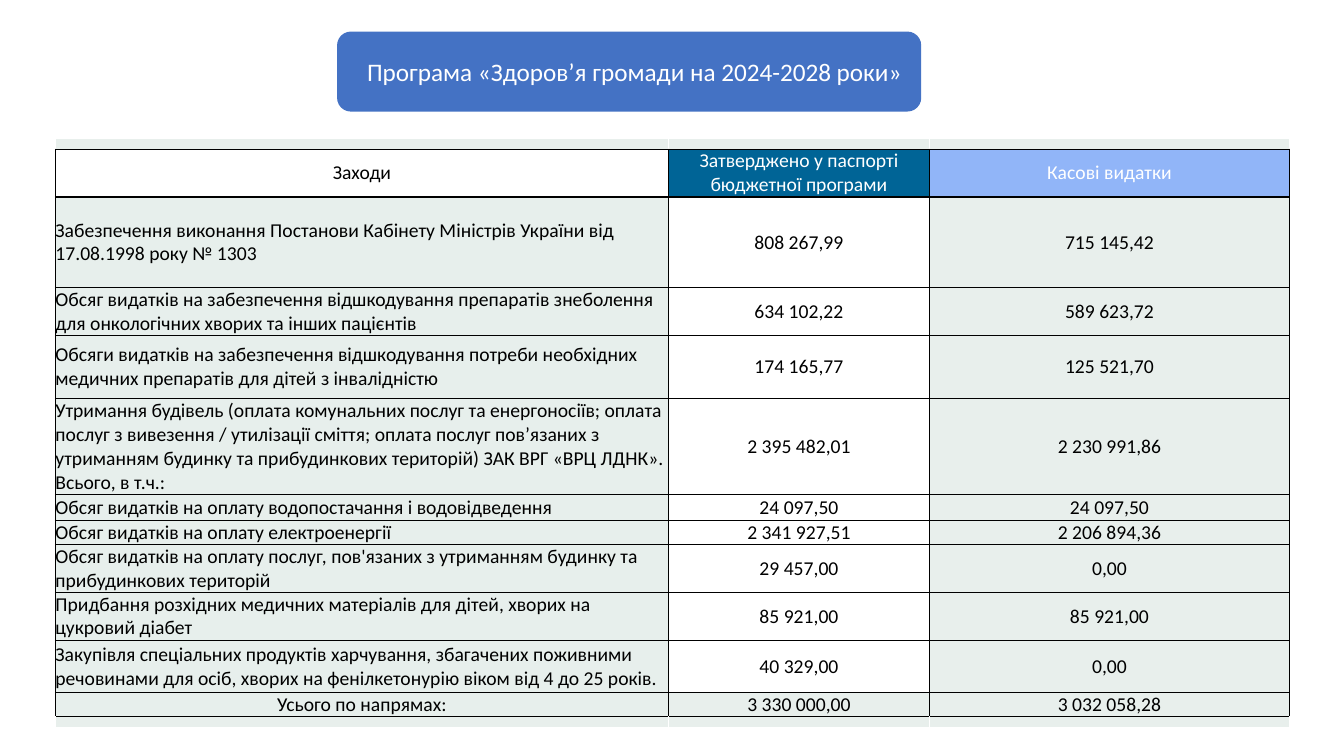
import pptx
import pptx.dml.color
import pptx.enum.shapes
import pptx.enum.text
import pptx.oxml
import pptx.oxml.ns
import pptx.util
from pptx.util import Inches

RGBColor = pptx.dml.color.RGBColor
BLACK = RGBColor(0x00, 0x00, 0x00)
WHITE = RGBColor(0xFF, 0xFF, 0xFF)
BLUE = RGBColor(0x44, 0x72, 0xC4)
TEAL = RGBColor(0x00, 0x64, 0x96)
SKY = RGBColor(0x91, 0xB5, 0xF8)
MINT = RGBColor(0xE7, 0xEF, 0xEC)
PALE = RGBColor(0xE8, 0xEF, 0xEC)

FONT = "Calibri"
LEFT = pptx.enum.text.PP_ALIGN.LEFT
CENTER = pptx.enum.text.PP_ALIGN.CENTER
MIDDLE = pptx.enum.text.MSO_ANCHOR.MIDDLE
TOP = pptx.enum.text.MSO_ANCHOR.TOP

TITLE = "Програма «Здоров’я громади на 2024-2028 роки»"
HEADERS = ["Заходи", "Затверджено у паспорті бюджетної програми", "Касові видатки"]
MEASURES = [
    ("Забезпечення виконання Постанови Кабінету Міністрів України від 17.08.1998 року № 1303",
     808267.99, 715145.42, 0.9),
    ("Обсяг видатків на забезпечення відшкодування препаратів знеболення "
     "для онкологічних хворих та інших пацієнтів", 634102.22, 589623.72, 0.47),
    ("Обсяги видатків на забезпечення відшкодування потреби необхідних "
     "медичних препаратів для дітей з інвалідністю", 174165.77, 125521.70, 0.63),
    ("Утримання будівель (оплата комунальних послуг та енергоносіїв; оплата "
     "послуг з вивезення / утилізації сміття; оплата послуг пов’язаних з "
     "утриманням будинку та прибудинкових територій) ЗАК ВРГ «ВРЦ "
     "ЛДНК». Всього, в т.ч.:", 2395482.01, 2230991.86, 0.93),
    ("Обсяг видатків на оплату водопостачання і водовідведення", 24097.50, 24097.50, 0.26),
    ("Обсяг видатків на оплату електроенергії", 2341927.51, 2206894.36, 0.24),
    ("Обсяг видатків на оплату послуг, пов'язаних з утриманням будинку та "
     "прибудинкових територій", 29457.00, 0, 0.47),
    ("Придбання розхідних медичних матеріалів для дітей, хворих на цукровий діабет",
     85921.00, 85921.00, 0.47),
    ("Закупівля спеціальних продуктів харчування, збагачених поживними "
     "речовинами для осіб, хворих на фенілкетонурію віком від 4 до 25 років.",
     40329.00, 0, 0.52),
]
TOTAL = ("Усього по напрямах:", 3330000.00, 3032058.28, 0.24)
HEADER_HEIGHT = 0.47
SPACER_HEIGHT = 0.11
COLUMN_WIDTHS = [6.08, 2.59, 3.57]


def money(value):
    """Format an amount with no-break group spaces and a decimal comma."""
    return f"{value:,.2f}".replace(",", chr(160)).replace(".", ",")


def set_attrs(obj, **values):
    """Set several attributes of one object."""
    for name, value in values.items():
        setattr(obj, name, value)


def write(tf, text, size, color, align):
    """Write one formatted paragraph into a text frame."""
    p = tf.paragraphs[0]
    p.alignment = align
    r = p.add_run()
    r.text = text
    set_attrs(r.font, name=FONT, size=pptx.util.Pt(size), bold=False)
    r.font.color.rgb = color


def format_cell(cell, fill, borders):
    """Fill a cell, clear its margins and draw its L, R, T, B borders."""
    set_attrs(cell, vertical_anchor=MIDDLE, margin_left=0, margin_right=0,
              margin_top=0, margin_bottom=0)
    cell.fill.solid()
    cell.fill.fore_color.rgb = fill
    tc_pr = cell._tc.get_or_add_tcPr()
    for i, (side, color) in enumerate(zip("LRTB", borders)):
        tc_pr.insert(i, pptx.oxml.parse_xml(
            f'<a:ln{side} {pptx.oxml.ns.nsdecls("a")} w="12700"><a:solidFill>'
            f'<a:srgbClr val="{color}"/></a:solidFill></a:ln{side}>'))


def add_spacer(row, borders):
    """Format an empty thin row at the edge of the table."""
    for cell in row.cells:
        format_cell(cell, PALE, borders)
        cell.text_frame.paragraphs[0]._p.append(pptx.oxml.parse_xml(
            f'<a:endParaRPr {pptx.oxml.ns.nsdecls("a")} sz="400"/>'))


def add_row(row, texts, fills, colors, aligns):
    """Fill one row of the table with text."""
    for cell, text, fill, color, align in zip(row.cells, texts, fills, colors, aligns):
        format_cell(cell, fill, [BLACK] * 4)
        write(cell.text_frame, text, 14, color, align)


def add_banner(s, left, top, width, height):
    """Place the rounded banner with the slide title over it."""
    sp = s.shapes.add_shape(pptx.enum.shapes.MSO_SHAPE.ROUNDED_RECTANGLE,
                            left, top, width, height)
    sp.shadow.inherit = False
    sp.fill.solid()
    sp.fill.fore_color.rgb = BLUE
    sp.line.color.rgb = BLUE
    sp.line.width = pptx.util.Pt(1)
    title = s.shapes.title
    title._element.addprevious(sp._element)
    set_attrs(title, left=left + Inches(0.19), top=top + Inches(0.19),
              width=width - Inches(0.1), height=Inches(0.4))
    set_attrs(title.text_frame, word_wrap=False, vertical_anchor=TOP,
              auto_size=pptx.enum.text.MSO_AUTO_SIZE.NONE)
    write(title.text_frame, TITLE, 18, WHITE, LEFT)


def add_spending_table(s, left, top, width):
    """Place the table of approved and actual spending."""
    body = MEASURES + [TOTAL]
    heights = [SPACER_HEIGHT, HEADER_HEIGHT, *(m[3] for m in body), SPACER_HEIGHT]
    table = s.shapes.add_table(len(heights), len(HEADERS), left, top, width,
                               Inches(sum(heights))).table
    set_attrs(table, first_row=False, horz_banding=False)
    for column, column_width in zip(table.columns, COLUMN_WIDTHS):
        column.width = Inches(column_width)
    rows = list(table.rows)
    for row, height in zip(rows, heights):
        row.height = Inches(height)
    add_spacer(rows[0], [WHITE, WHITE, WHITE, BLACK])
    add_row(rows[1], HEADERS, [WHITE, TEAL, SKY], [BLACK, WHITE, WHITE], [CENTER] * 3)
    for row, measure in zip(rows[2:], body):
        name, approved, spent, _ = measure
        is_total = measure is TOTAL
        add_row(row, [name, money(approved), money(spent)],
                [MINT, PALE if is_total else WHITE, PALE], [BLACK] * 3,
                [CENTER if is_total else LEFT, CENTER, CENTER])
    add_spacer(rows[-1], [WHITE, WHITE, BLACK, WHITE])


def main():
    """Build the slide and save it."""
    prs = pptx.Presentation()
    set_attrs(prs, slide_width=Inches(13.33), slide_height=Inches(7.5))
    s = prs.slides.add_slide(prs.slide_layouts[5])
    add_banner(s, Inches(3.35), Inches(0.32), Inches(5.78), Inches(0.78))
    add_spending_table(s, Inches(0.55), Inches(1.37), Inches(sum(COLUMN_WIDTHS)))
    prs.save("out.pptx")


if __name__ == "__main__":
    main()
